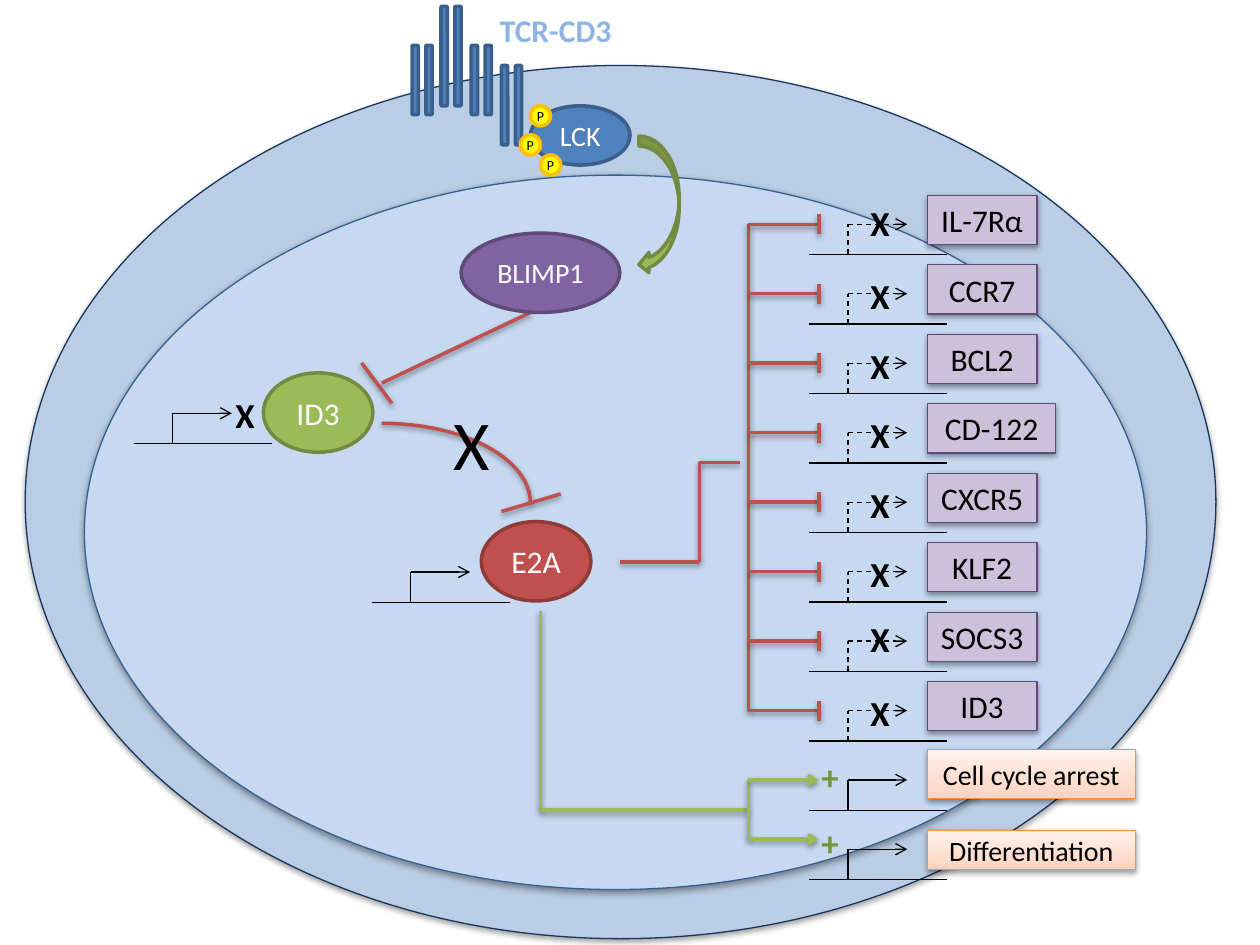
from copy import deepcopy

from lxml import etree
from pptx import Presentation
from pptx.dml.color import RGBColor
from pptx.enum.dml import MSO_LINE
from pptx.enum.shapes import MSO_CONNECTOR, MSO_SHAPE
from pptx.enum.text import MSO_ANCHOR, MSO_AUTO_SIZE, PP_ALIGN
from pptx.oxml import parse_xml
from pptx.oxml.ns import nsdecls, qn
from pptx.util import Inches, Pt

STRAIGHT = MSO_CONNECTOR.STRAIGHT
DASH = MSO_LINE.DASH
ELLIPSE, RECTANGLE = MSO_SHAPE.OVAL, MSO_SHAPE.RECTANGLE
ROUNDED, ARC = MSO_SHAPE.ROUNDED_RECTANGLE, MSO_SHAPE.ARC
CURVED_ARROW = MSO_SHAPE.CURVED_DOWN_ARROW
CENTER, MIDDLE = PP_ALIGN.CENTER, MSO_ANCHOR.MIDDLE
GROW = MSO_AUTO_SIZE.SHAPE_TO_FIT_TEXT

BLACK = RGBColor(0x00, 0x00, 0x00)
WHITE = RGBColor(0xFF, 0xFF, 0xFF)
CELL, CELL_EDGE = RGBColor(0xB9, 0xCD, 0xE5), RGBColor(0x17, 0x37, 0x5E)
NUCLEUS, NUCLEUS_EDGE = RGBColor(0xC6, 0xD9, 0xF1), RGBColor(0x37, 0x60, 0x92)
BLUE, BLUE_EDGE = RGBColor(0x4F, 0x81, 0xBD), RGBColor(0x3A, 0x5F, 0x8C)
RED, RED_EDGE = RGBColor(0xC0, 0x50, 0x4D), RGBColor(0x8E, 0x3B, 0x39)
GREEN, GREEN_EDGE = RGBColor(0x9B, 0xBB, 0x59), RGBColor(0x73, 0x8A, 0x42)
PURPLE, PURPLE_EDGE = RGBColor(0x80, 0x64, 0xA2), RGBColor(0x5F, 0x4A, 0x78)
LILAC, LILAC_EDGE = RGBColor(0xCC, 0xC1, 0xDA), RGBColor(0x60, 0x4A, 0x7B)
YELLOW, GOLD = RGBColor(0xFF, 0xFF, 0x00), RGBColor(0xFF, 0xC0, 0x00)
ORANGE = RGBColor(0xF6, 0x92, 0x40)
PEACH = ((0, RGBColor(0xFF, 0xD2, 0xBD)), (0.35, RGBColor(0xFF, 0xDE, 0xD0)),
         (1, RGBColor(0xFF, 0xF2, 0xED)))
PLUS_GREEN = RGBColor(0x77, 0x93, 0x3C)
RECEPTOR_LABEL = RGBColor(0x8E, 0xB4, 0xE3)

FONT = "Calibri"
FIRST_ROW, ROW_GAP = 1.78, 3.86 / 7
BUS_X, BAR_X = 5.94, 6.5
PROMOTER_X, GENE_X = 6.42, 7.36
# Gene name, box width, height of its X mark above the arrow
REPRESSED_GENES = (
    ("IL-7Rα", 0.87, 0.23), ("CCR7", 0.87, 0.2), ("BCL2", 0.87, 0.2),
    ("CD-122", 1.02, 0.2), ("CXCR5", 0.87, 0.2), ("KLF2", 0.87, 0.2),
    ("SOCS3", 0.87, 0.24), ("ID3", 0.87, 0.2))


def set_shadow(shape, visible):
    """Give a shape or connector a soft drop shadow, or none."""
    effects = etree.SubElement(shape._element.spPr, qn("a:effectLst"))
    if visible:
        effects.append(parse_xml(
            f'<a:outerShdw {nsdecls("a")} blurRad="40000" dist="20000" dir="5400000" '
            'rotWithShape="0"><a:srgbClr val="000000"><a:alpha val="38000"/>'
            '</a:srgbClr></a:outerShdw>'))


def write(shape, text, size, color, bold=False):
    """Put one centred line of text in a shape."""
    frame = shape.text_frame
    frame.text = text
    paragraph = frame.paragraphs[0]
    paragraph.alignment = CENTER
    font = paragraph.font
    font.name, font.size, font.bold = FONT, Pt(size), bold
    font.color.rgb = color
    return frame


def add_label(slide, text, left, top, width, height, size=20, color=BLACK, bold=True):
    """Add a free-standing label."""
    box = slide.shapes.add_textbox(*map(Inches, (left, top, width, height)))
    frame = write(box, text, size, color, bold)
    frame.word_wrap = True
    frame.auto_size = GROW


def fill_gradient(shape, stops):
    """Fill a shape with a three-stop gradient running upwards."""
    fill = shape.fill
    fill.gradient()
    fill.gradient_angle = 90
    stop_list = shape._element.spPr.find(".//" + qn("a:gsLst"))
    stop_list.append(deepcopy(stop_list[0]))
    for stop, (position, color) in zip(fill.gradient_stops, stops):
        stop.position = position
        stop.color.rgb = color


def add_figure(slide, kind, left, top, width, height, fill, edge, weight=2.0, shadow=False):
    """Add a preset shape; fill is a colour, gradient stops or None."""
    shape = slide.shapes.add_shape(kind, *map(Inches, (left, top, width, height)))
    if fill is None:
        shape.fill.background()
    elif isinstance(fill, RGBColor):
        shape.fill.solid()
        shape.fill.fore_color.rgb = fill
    else:
        fill_gradient(shape, fill)
    shape.line.color.rgb = edge
    shape.line.width = Pt(weight)
    set_shadow(shape, shadow)
    return shape


def write_inside(shape, text, size, color):
    """Centre text in a preset shape without margins."""
    frame = write(shape, text, size, color)
    frame.vertical_anchor = MIDDLE
    frame.margin_left = frame.margin_right = 0
    frame.margin_top = frame.margin_bottom = 0


def add_protein(slide, text, left, top, width, height, fill, edge, size=18, color=WHITE):
    """Add a named oval."""
    oval = add_figure(slide, ELLIPSE, left, top, width, height, fill, edge)
    write_inside(oval, text, size, color)


def add_box(slide, text, top, width, height, fill, edge, size):
    """Add a gene or outcome box in the right-hand column."""
    box = add_figure(slide, RECTANGLE, GENE_X, top, width, height, fill, edge, 0.75, True)
    write_inside(box, text, size, BLACK)


def add_line(slide, start, end, color=BLACK, arrow=False, dashed=False):
    """Add a line; black ones are thin and flat, coloured ones thick and shadowed."""
    line = slide.shapes.add_connector(STRAIGHT, *map(Inches, (*start, *end)))
    line.line.color.rgb = color
    line.line.width = Pt(0.75 if color == BLACK else 2)
    if dashed:
        line.line.dash_style = DASH
    if arrow:
        outline = line._element.spPr.find(qn("a:ln"))
        etree.SubElement(outline, qn("a:tailEnd"), type="arrow")
    set_shadow(line, color != BLACK)


def add_path(slide, points, color):
    """Join successive points with lines."""
    for start, end in zip(points, points[1:]):
        add_line(slide, start, end, color)


def add_promoter(slide, left, y, dashed=False):
    """Add a gene baseline with its bent transcription arrow at height y."""
    base, stem = y + 0.24, left + 0.31
    add_line(slide, (left, base), (left + 1.1, base))
    add_line(slide, (stem, base), (stem, y), dashed=dashed)
    add_line(slide, (stem, y), (left + 0.78, y), arrow=True, dashed=dashed)


def add_receptor(slide):
    """Add the receptor chains in the membrane and their label."""
    for left, top, height in ((3.5, 0.05, 0.79), (3.74, 0.36, 0.55),
                              (3.27, 0.36, 0.55), (3.98, 0.52, 0.63)):
        for offset in (0, 0.11):
            add_figure(slide, ROUNDED, left + offset, top, 0.05, height, BLUE, BLUE_EDGE)
    add_label(slide, "TCR-CD3", 3.82, 0.04, 1.18, 0.4, 18, RECEPTOR_LABEL)


def add_repressed_genes(slide):
    """Add the column of genes that E2A represses."""
    last_row = FIRST_ROW + ROW_GAP * (len(REPRESSED_GENES) - 1)
    add_line(slide, (BUS_X, FIRST_ROW), (BUS_X, last_row), RED)
    for row, (name, width, mark_rise) in enumerate(REPRESSED_GENES):
        y = FIRST_ROW + ROW_GAP * row
        add_promoter(slide, PROMOTER_X, y, dashed=True)
        add_box(slide, name, y - 0.23, width, 0.39, LILAC, LILAC_EDGE, 18)
        add_line(slide, (BAR_X, y), (BUS_X, y), RED)
        add_line(slide, (BAR_X, y - 0.08), (BAR_X, y + 0.08), RED)
        add_label(slide, "X", 6.81, y - mark_rise, 0.32, 0.44)
    add_path(slide, ((5.87, 3.67), (5.55, 3.67), (5.55, 4.46), (4.92, 4.46)), RED)


def add_outcomes(slide):
    """Add the two outcomes that E2A promotes."""
    add_path(slide, ((4.29, 4.85), (4.29, 6.43), (BUS_X, 6.43)), GREEN)
    add_line(slide, (BUS_X, 6.19), (BUS_X, 6.66), GREEN)
    for name, y, arrow_y, plus_top, top, height in (
            ("Cell cycle arrest", 6.19, 6.19, 5.95, 5.95, 0.39),
            ("Differentiation", 6.74, 6.66, 6.47, 6.59, 0.31)):
        add_promoter(slide, PROMOTER_X, y)
        add_label(slide, "+", 6.42, plus_top, 0.32, 0.44, color=PLUS_GREEN)
        add_line(slide, (BUS_X, arrow_y), (BAR_X, arrow_y), GREEN, arrow=True)
        add_box(slide, name, top, 1.65, height, PEACH, ORANGE, 16)


def add_signalling(slide):
    """Add the cascade from LCK through BLIMP1 and ID3 to E2A."""
    add_protein(slide, "E2A", 3.82, 4.14, 0.87, 0.63, RED, RED_EDGE)
    add_promoter(slide, 1.06, 3.28)
    add_promoter(slide, 2.95, 4.54)
    add_line(slide, (4.21, 2.48), (3.03, 3.04), RED)
    add_line(slide, (2.87, 2.88), (3.11, 3.2), RED)
    add_protein(slide, "BLIMP1", 3.66, 1.85, 1.26, 0.63, PURPLE, PURPLE_EDGE, 16)
    add_label(slide, "X", 1.77, 3.07, 0.32, 0.44)
    add_protein(slide, "ID3", 2.09, 2.96, 0.87, 0.63, GREEN, GREEN_EDGE)
    add_figure(slide, ARC, 1.85, 3.36, 2.36, 1.26, None, RED, shadow=True)
    add_line(slide, (3.98, 4.06), (4.45, 3.92), RED)
    add_label(slide, "X", 3.5, 3.13, 0.47, 0.77, 40, bold=False)
    arrow = add_figure(slide, CURVED_ARROW, 4.68, 1.47, 1.1, 0.32, GREEN, GREEN_EDGE)
    arrow.rotation = 90
    add_protein(slide, "LCK", 4.21, 0.84, 0.79, 0.47, BLUE, BLUE_EDGE, 16)
    for left, top in ((4.21, 0.84), (4.13, 1.07), (4.29, 1.23)):
        add_protein(slide, "P", left, top, 0.16, 0.16, YELLOW, GOLD, 8, BLACK)


def main():
    """Build the signalling diagram and save it."""
    presentation = Presentation()
    presentation.slide_width, presentation.slide_height = Inches(10), Inches(7.5)
    slide = presentation.slides.add_slide(presentation.slide_layouts[6])
    add_figure(slide, ELLIPSE, 0.2, 0.52, 9.45, 6.93, CELL, CELL_EDGE, 0.75, True)
    add_figure(slide, ELLIPSE, 0.67, 1.39, 8.43, 5.67, NUCLEUS, NUCLEUS_EDGE, 0.75, True)
    add_receptor(slide)
    add_repressed_genes(slide)
    add_signalling(slide)
    add_outcomes(slide)
    presentation.save("out.pptx")


main()
